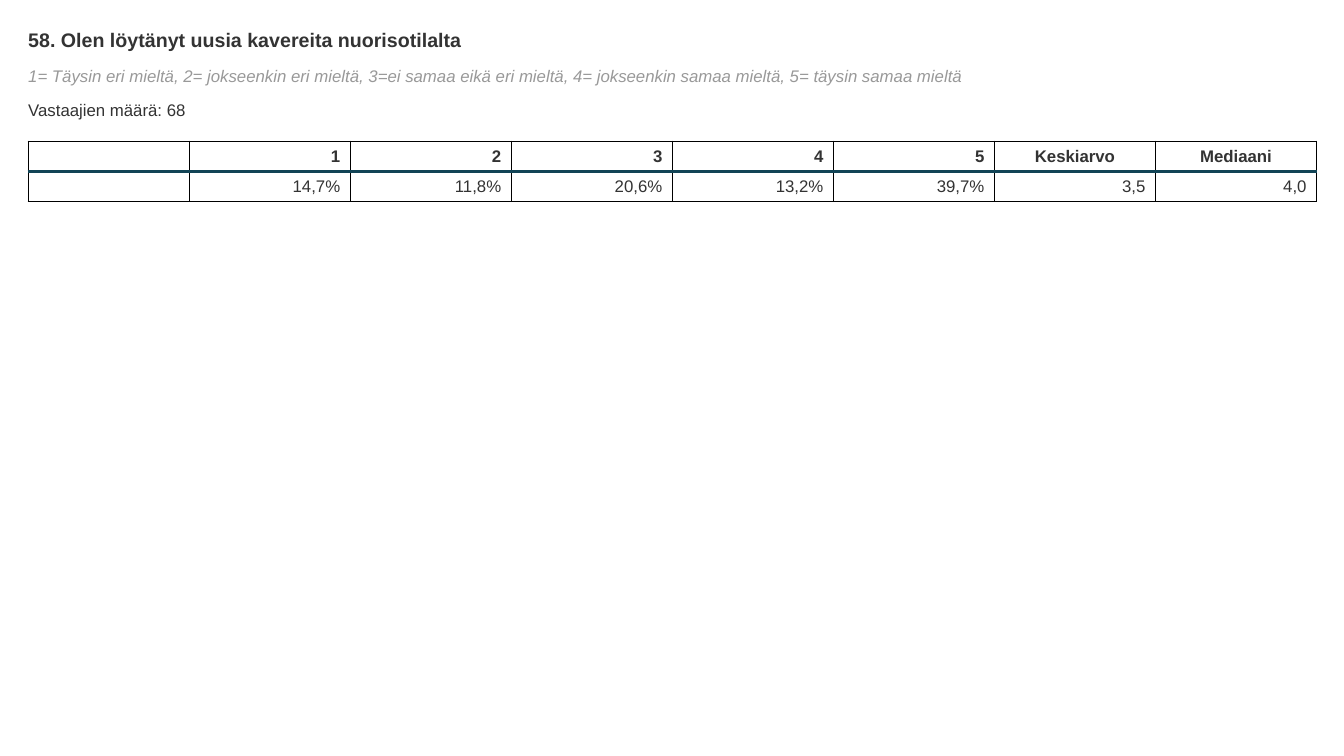
from lxml import etree
from pptx import Presentation
from pptx.dml.color import RGBColor
from pptx.enum.text import MSO_ANCHOR, MSO_AUTO_SIZE, PP_ALIGN
from pptx.oxml.ns import qn
from pptx.util import Inches, Pt

LEFT, CENTER, RIGHT = PP_ALIGN.LEFT, PP_ALIGN.CENTER, PP_ALIGN.RIGHT
TOP, MIDDLE = MSO_ANCHOR.TOP, MSO_ANCHOR.MIDDLE
FIT_SHAPE = MSO_AUTO_SIZE.SHAPE_TO_FIT_TEXT
DARK, GREY, BLACK, TEAL = "333333", "999999", "000000", "124456"
MARGIN, CONTENT_WIDTH = 0.28, 12.78


def write(paragraph, text, align, color=DARK, **font_format):
    paragraph.alignment = align
    run = paragraph.add_run()
    run.text = text
    run.font.color.rgb = RGBColor.from_string(color)
    for name, value in {"name": "Arial", "size": Pt(12), **font_format}.items():
        setattr(run.font, name, value)


def add_border(cell, side, color, points):
    line = etree.SubElement(cell._tc.get_or_add_tcPr(), qn(f"a:ln{side}"), w=str(Pt(points)))
    fill = etree.SubElement(line, qn("a:solidFill"))
    etree.SubElement(fill, qn("a:srgbClr"), val=color)


prs = Presentation()
prs.slide_width, prs.slide_height = Inches(13.33), Inches(7.5)
slide = prs.slides.add_slide(prs.slide_layouts[5])

# Question, answer scale and number of respondents
question = slide.shapes.title
scale = slide.shapes.add_textbox(0, 0, 0, 0)
respondents = slide.shapes.add_textbox(0, 0, 0, 0)
headings = [
    (question, 0.28, 0.23, "58. Olen löytänyt uusia kavereita nuorisotilalta",
     {"size": Pt(14), "bold": True}),
    (scale, 0.65, 0.2,
     "1= Täysin eri mieltä, 2= jokseenkin eri mieltä, 3=ei samaa eikä eri mieltä, "
     "4= jokseenkin samaa mieltä, 5= täysin samaa mieltä",
     {"color": GREY, "italic": True}),
    (respondents, 0.99, 0.2, "Vastaajien määrä: 68", {}),
]
frame_format = {"margin_left": 0, "margin_top": 0, "margin_right": 0, "margin_bottom": 0,
                "word_wrap": True, "vertical_anchor": TOP, "auto_size": FIT_SHAPE}
for heading, top, height, text, font_format in headings:
    heading.left, heading.top = Inches(MARGIN), Inches(top)
    heading.width, heading.height = Inches(CONTENT_WIDTH), Inches(height)
    for name, value in frame_format.items():
        setattr(heading.text_frame, name, value)
    write(heading.text_frame.paragraphs[0], text, LEFT, **font_format)

# Answer distribution
answers = [
    ["", "1", "2", "3", "4", "5", "Keskiarvo", "Mediaani"],
    ["", "14,7%", "11,8%", "20,6%", "13,2%", "39,7%", "3,5", "4,0"],
]
distribution = slide.shapes.add_table(
    len(answers), len(answers[0]), Inches(MARGIN), Inches(1.4),
    Inches(CONTENT_WIDTH), Inches(0.6)).table
distribution.first_row = distribution.horz_banding = False

for row, values in enumerate(answers):
    is_header = row == 0
    for column, value in enumerate(values):
        cell = distribution.cell(row, column)
        cell.vertical_anchor = MIDDLE
        paragraph = cell.text_frame.paragraphs[0]
        if value:
            align = CENTER if is_header and column > 5 else RIGHT
            write(paragraph, value, align, bold=is_header)
        else:
            # Keeps an empty cell as low as the filled ones
            etree.SubElement(paragraph._p, qn("a:endParaRPr"), sz="1200")
        divider_side = "B" if is_header else "T"
        for side in "LRTB":
            color, points = (TEAL, 2) if side == divider_side else (BLACK, 1)
            add_border(cell, side, color, points)
        cell.fill.background()

prs.save("out.pptx")
